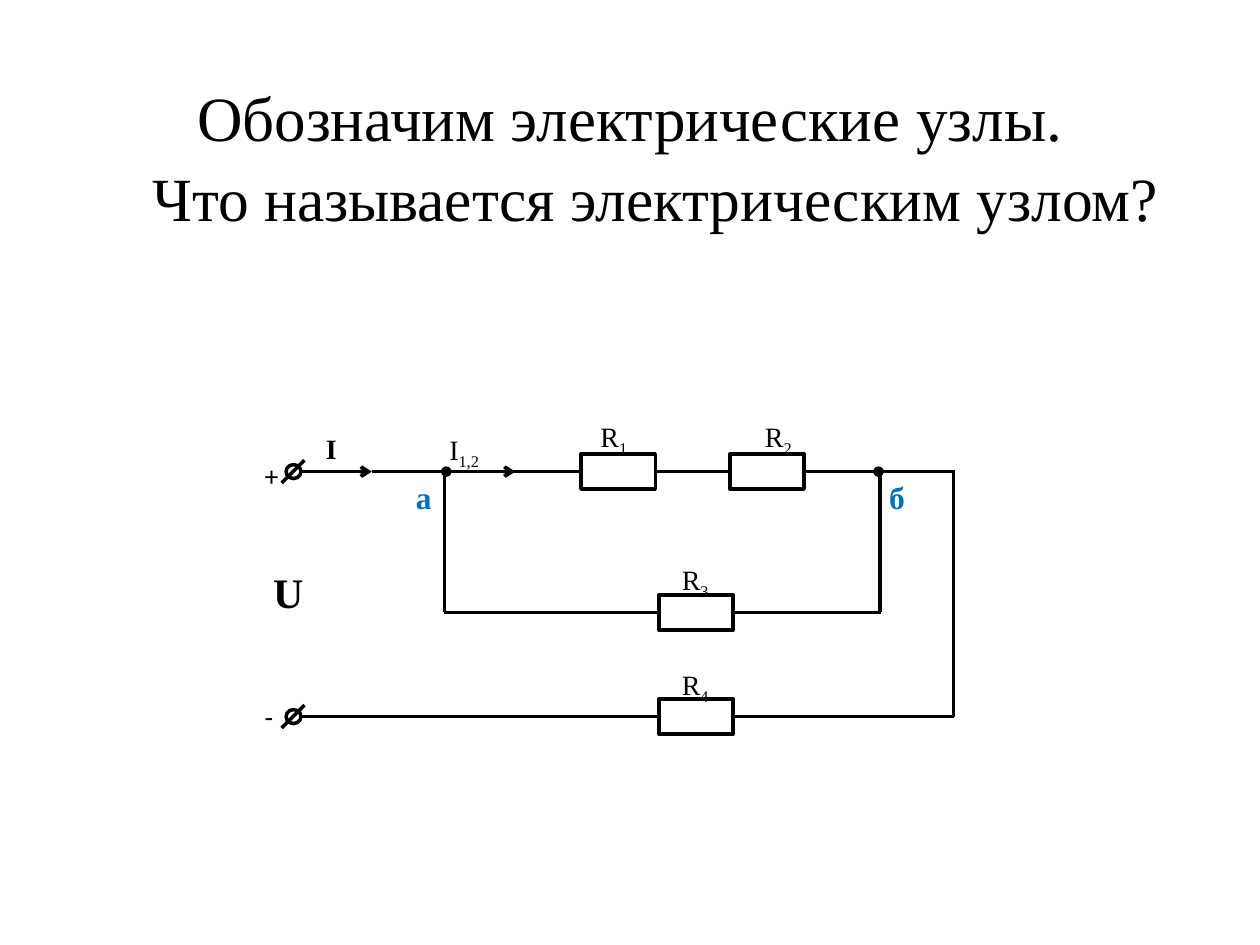
import pptx
import pptx.util
import pptx.oxml
import pptx.oxml.ns
import pptx.dml.color
import pptx.enum.shapes
import pptx.enum.text

Pt = pptx.util.Pt
MSO_SHAPE = pptx.enum.shapes.MSO_SHAPE
ALIGN = pptx.enum.text.PP_ALIGN
ANCHOR = pptx.enum.text.MSO_ANCHOR

COLORS = {"ink": "000000", "paper": "FFFFFF", "node": "0070C0"}
SERIF = "Times New Roman"
SEGMENT = 42.5  # length of one wire piece and width of a resistor
RESISTOR_H = 20
TOP, MIDDLE, BOTTOM = 269.5, 350, 409.5

# resistor number: left edge, height of the wire it sits on
RESISTORS = {1: (332, TOP), 2: (417, TOP), 3: (376.5, MIDDLE), 4: (376.5, BOTTOM)}
# label boxes of the resistors: left, top
RESISTOR_LABELS = {1: (317, 231), 2: (411, 231), 3: (363.5, 313), 4: (363.5, 372.5)}

# row height: (left end of each wire piece, end marker)
ROWS = {
    TOP: [(170, "arrow"), (212.5, "oval"), (252, "arrow"), (289.5, None),
          (374.5, None), (459.5, "oval"), (503, None)],
    MIDDLE: [(253.5, None), (294.5, None), (334, None), (419, None), (461, None)],
    BOTTOM: [(168.5, None), (211, None), (252, None), (291, None), (334, None),
             (419, None), (461.5, None), (502.5, None)],
}
VERTICALS = [(254, MIDDLE), (503, MIDDLE), (545, BOTTOM)]
TERMINALS = [TOP, BOTTOM]


def rgb(name):
    return pptx.dml.color.RGBColor.from_string(COLORS[name])


def apply(obj, values):
    for name, value in values.items():
        setattr(obj, name, value)


def write(p, text, size, color="ink", sub="", font=SERIF, bold=False):
    """Add text, and optionally a subscript, to a paragraph."""
    for part in filter(None, (text, sub)):
        r = p.add_run()
        r.text = part
        apply(r.font, {"size": Pt(size), "name": font, "bold": bold})
        r.font.color.rgb = rgb(color)
        if part == sub:
            r.font._element.set("baseline", "-25000")


def add_heading(sp, text, left, top, size):
    apply(sp, {"left": Pt(left), "top": Pt(top), "width": Pt(648), "height": Pt(90)})
    tf = sp.text_frame
    apply(tf, {"word_wrap": True, "vertical_anchor": ANCHOR.MIDDLE,
               "auto_size": pptx.enum.text.MSO_AUTO_SIZE.NONE})
    tf.paragraphs[0].alignment = ALIGN.CENTER
    write(tf.paragraphs[0], text, size)


def add_label(g, text, box, size=16, align=ALIGN.CENTER, inset=(10.8, 5.4), **style):
    tf = g.shapes.add_textbox(*map(Pt, box)).text_frame
    x, y = map(Pt, inset)
    apply(tf, {"word_wrap": True, "margin_left": x, "margin_right": x,
               "margin_top": y, "margin_bottom": y})
    p = tf.paragraphs[0]
    apply(p, {"alignment": align, "line_spacing": 1.15, "space_after": Pt(10)})
    write(p, text, size, **style)


def add_outlined(g, kind, left, top, width, height):
    sp = g.shapes.add_shape(kind, Pt(left), Pt(top), Pt(width), Pt(height))
    sp.shadow.inherit = False
    sp.fill.solid()
    sp.fill.fore_color.rgb = rgb("paper")
    sp.line.color.rgb = rgb("ink")
    sp.line.width = Pt(2)
    return sp


def add_wire(g, x1, y1, x2, y2, marker=None):
    wire = g.shapes.add_connector(
        pptx.enum.shapes.MSO_CONNECTOR.STRAIGHT, Pt(x1), Pt(y1), Pt(x2), Pt(y2))
    wire.line.color.rgb = rgb("ink")
    wire.line.width = Pt(2)
    if marker:
        tail = pptx.oxml.parse_xml(
            f'<a:tailEnd {pptx.oxml.ns.nsdecls("a")} type="{marker}"/>')
        wire.line._get_or_add_ln().append(tail)
    wire._element.spPr.append(
        pptx.oxml.parse_xml(f'<a:effectLst {pptx.oxml.ns.nsdecls("a")}/>'))
    return wire


def add_row(g, y, pieces, resistors):
    """Draw the wire pieces of one row, joined to the resistors they touch."""
    for x, marker in pieces:
        wire = add_wire(g, x, y, x + SEGMENT, y, marker)
        for number, (left, row) in RESISTORS.items():
            if row == y and x + SEGMENT == left:
                wire.end_connect(resistors[number], 1)
            if row == y and x == left + SEGMENT:
                wire.begin_connect(resistors[number], 3)


def add_terminal(g, y):
    add_outlined(g, MSO_SHAPE.FLOWCHART_CONNECTOR, 163.5, y - 4, 8.5, 8)
    add_wire(g, 174, y - 6.5, 161, y + 6.5)


def add_circuit(g):
    resistors = {
        number: add_outlined(g, MSO_SHAPE.RECTANGLE, left, y - RESISTOR_H / 2,
                             SEGMENT, RESISTOR_H)
        for number, (left, y) in RESISTORS.items()}
    for y, pieces in ROWS.items():
        add_row(g, y, pieces, resistors)
    for x, y in VERTICALS:
        add_wire(g, x, TOP, x, y)
    for y in TERMINALS:
        add_terminal(g, y)


def add_labels(g):
    for number, (left, top) in RESISTOR_LABELS.items():
        add_label(g, "R", (left, top, 67.5, 38), sub=str(number))
    add_label(g, "+", (140.5, 254, 28, 28), align=ALIGN.LEFT, font="Calibri")
    add_label(g, "-", (140.5, 391.5, 52, 49), align=ALIGN.LEFT, font="Calibri")
    add_label(g, "I", (155, 238.5, 68.5, 31), bold=True)
    add_label(g, "I", (246, 238.5, 59, 47.5), align=ALIGN.LEFT, sub="1,2")
    add_label(g, "U", (106.5, 314, 116.5, 31), size=24, bold=True)
    for node, left in (("a", 230.5), ("б", 501)):
        add_label(g, node, (left, 266.5, 22.5, 28), size=18, align=ALIGN.LEFT,
                  inset=(7.2, 3.6), color="node", bold=True)


def main():
    prs = pptx.Presentation()
    apply(prs, {"slide_width": Pt(720), "slide_height": Pt(540)})
    s = prs.slides.add_slide(prs.slide_layouts[5])
    add_heading(s.shapes.title, "Обозначим электрические узлы.", 36, 21.5, 36)
    question = s.shapes.add_textbox(0, 0, 0, 0)
    add_heading(question, "Что называется электрическим узлом?", 50.5, 67.5, 35.1)
    circuit = s.shapes.add_group_shape()
    add_circuit(circuit)
    add_labels(circuit)
    prs.save("out.pptx")


if __name__ == "__main__":
    main()
